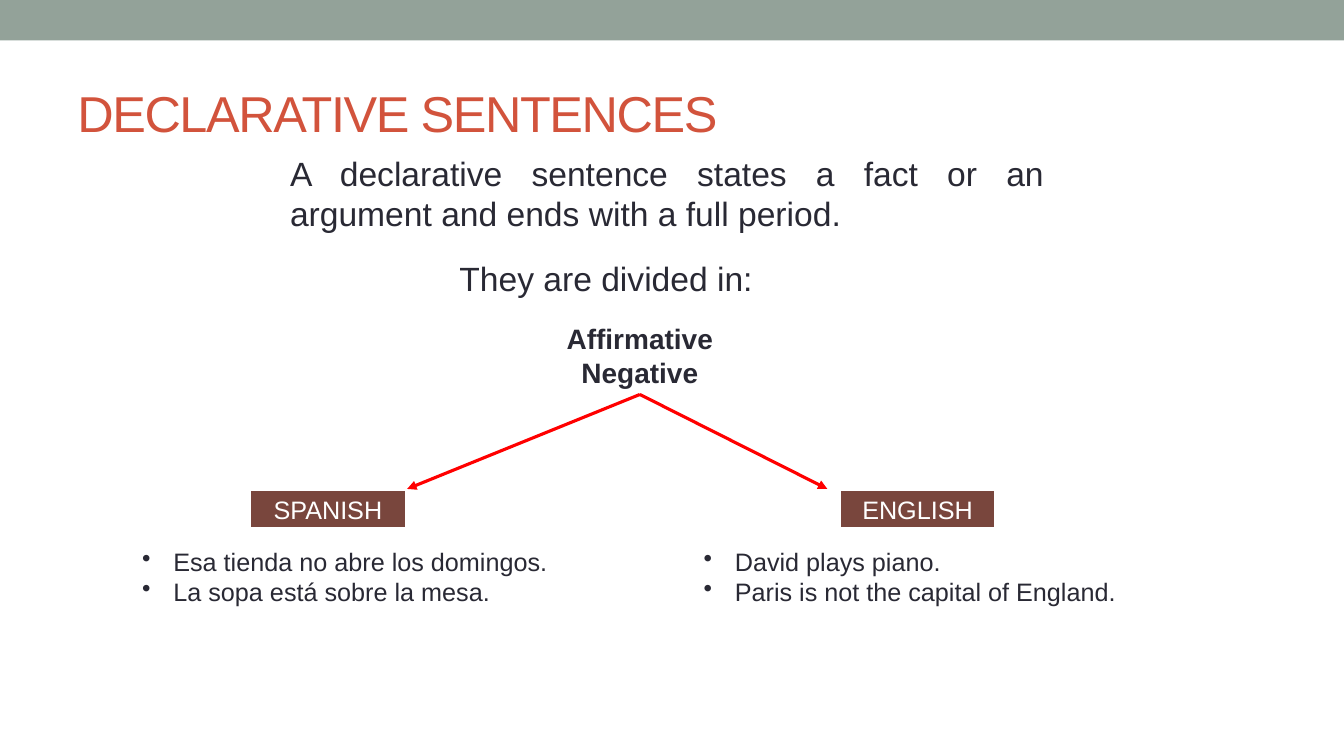
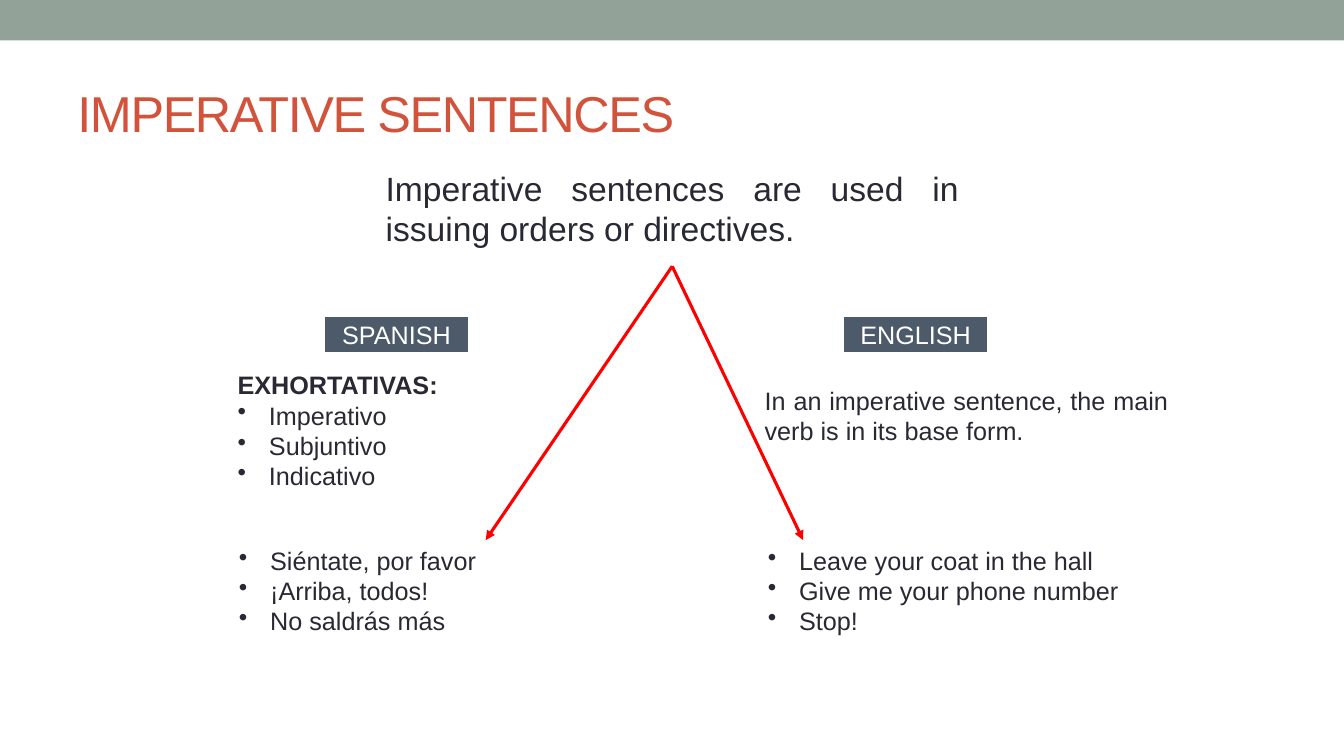
from lxml import etree
from pptx import Presentation
from pptx.dml.color import RGBColor
from pptx.enum.shapes import MSO_CONNECTOR, MSO_SHAPE
from pptx.enum.text import MSO_ANCHOR, MSO_AUTO_SIZE, PP_ALIGN
from pptx.oxml.ns import qn
from pptx.util import Cm, Pt

STRAIGHT = MSO_CONNECTOR.STRAIGHT
RECTANGLE = MSO_SHAPE.RECTANGLE
TOP, MIDDLE = MSO_ANCHOR.TOP, MSO_ANCHOR.MIDDLE
GROW = MSO_AUTO_SIZE.SHAPE_TO_FIT_TEXT
LEFT, CENTER, JUSTIFY = PP_ALIGN.LEFT, PP_ALIGN.CENTER, PP_ALIGN.JUSTIFY

SAGE = RGBColor(0x93, 0xA2, 0x99)
RUST = RGBColor(0xD2, 0x53, 0x3C)
INK = RGBColor(0x29, 0x29, 0x34)
BROWN = RGBColor(0x79, 0x46, 0x3D)
SLATE = RGBColor(0x4C, 0x5A, 0x6A)
RED = RGBColor(0xFF, 0x00, 0x00)
WHITE = RGBColor(0xFF, 0xFF, 0xFF)

FONT = "Arial"
WIDTH, HEIGHT = 33.87, 19.05
TAG_HEIGHT = 1.02
BOTTOM_SIDE = 2


class SentenceDeck:
    def __init__(self):
        self.deck = Presentation()
        self.deck.slide_width, self.deck.slide_height = Cm(WIDTH), Cm(HEIGHT)
        self.page = None

    def start_page(self, title):
        self.page = self.deck.slides.add_slide(self.deck.slide_layouts[6])
        self.rectangle(0, 0, WIDTH, 1.02, SAGE)
        box = self.text(1.7, 1.47, 30.48, 2.74, [title], 36, color=RUST)
        box.text_frame.vertical_anchor = MIDDLE
        for span in box.text_frame.paragraphs[0].runs:
            span.font._element.set("spc", "-100")

    def rectangle(self, left, top, width, height, color):
        box = self.page.shapes.add_shape(RECTANGLE, Cm(left), Cm(top), Cm(width), Cm(height))
        box.shadow.inherit = False
        box.fill.solid()
        box.fill.fore_color.rgb = color
        box.line.fill.background()
        return box

    def set_lines(self, box, lines, size, color=INK, align=LEFT, bold=False):
        frame = box.text_frame
        frame.word_wrap = True
        for index, line in enumerate(lines):
            para = frame.paragraphs[0] if index == 0 else frame.add_paragraph()
            para.text = line
            para.alignment = align
            para.font.name, para.font.size = FONT, Pt(size)
            para.font.bold = bold
            para.font.color.rgb = color

    def text(self, left, top, width, height, lines, size=18, **style):
        box = self.page.shapes.add_textbox(Cm(left), Cm(top), Cm(width), Cm(height))
        self.set_lines(box, lines, size, **style)
        return box

    def bullets(self, left, top, width, height, items, heading=None):
        lines = [heading, *items] if heading else items
        box = self.text(left, top, width, height, lines)
        paras = list(box.text_frame.paragraphs)
        if heading:
            paras.pop(0).font.bold = True
        for para in paras:
            properties = para._p.get_or_add_pPr()
            properties.set("marL", str(Cm(0.79)))
            properties.set("indent", str(-Cm(0.79)))
            bullet = etree.Element(qn("a:buChar"), char="•")
            properties.insert_element_before(bullet, "a:tabLst", "a:defRPr", "a:extLst")

    def tag(self, left, top, width, label, color):
        box = self.rectangle(left, top, width, TAG_HEIGHT, color)
        box.line.color.rgb = WHITE
        box.line.width = Pt(3.5)
        self.set_lines(box, [label], 18, color=WHITE, align=CENTER)
        box.text_frame.vertical_anchor = TOP
        box.text_frame.auto_size = GROW

    def language_tags(self, lefts, top, width, color):
        for left, label in zip(lefts, ("SPANISH", "ENGLISH")):
            self.tag(left, top, width, label, color)

    def arrows(self, source, ends, top):
        for end in ends:
            arrow = self.page.shapes.add_connector(STRAIGHT, 0, 0, Cm(end), Cm(top))
            arrow.begin_connect(source, BOTTOM_SIDE)
            arrow.line.color.rgb = RED
            arrow.line.width = Pt(2.25)
            etree.SubElement(arrow.line._get_or_add_ln(), qn("a:tailEnd"), type="triangle")
            etree.SubElement(arrow._element.spPr, qn("a:effectLst"))


def declarative_page(show):
    show.start_page("DECLARATIVE SENTENCES")
    show.text(7.06, 3.73, 19.5, 2.69,
              ["A declarative sentence states a fact or an argument and ends with a full period."],
              24, align=JUSTIFY)
    show.text(11.33, 6.38, 9.75, 1.35, ["They are divided in:"], 24, align=JUSTIFY)
    kinds = show.text(13.46, 7.98, 5.33, 1.96, ["Affirmative", "Negative"], 20,
                      align=CENTER, bold=True)
    examples = (
        (3.33, ["Esa tienda no abre los domingos.", "La sopa está sobre la mesa."]),
        (17.48, ["David plays piano.", "Paris is not the capital of England."]),
    )
    for left, items in examples:
        show.bullets(left, 13.64, 10.9, 1.8, items)
    show.language_tags((6.27, 21.13), 12.32, 3.99, BROWN)
    show.arrows(kinds, (10.26, 20.85), 12.32)


def imperative_page(show):
    show.start_page("IMPERATIVE SENTENCES")
    definition = show.text(9.47, 4.11, 14.94, 2.6,
                           ["Imperative sentences are used in issuing orders or directives."],
                           24, align=JUSTIFY)
    show.text(19.02, 9.58, 10.67, 1.8,
              ["In an imperative sentence, the main verb is in its base form."], align=JUSTIFY)
    show.bullets(5.74, 9.19, 8.26, 3.33, ["Imperativo", "Subjuntivo", "Indicativo"],
                 heading="EXHORTATIVAS:")
    examples = (
        (5.77, 8.26, ["Siéntate, por favor", "¡Arriba, todos!", "No saldrás más"]),
        (19.1, 12.22, ["Leave your coat in the hall", "Give me your phone number", "Stop!"]),
    )
    for left, width, items in examples:
        show.bullets(left, 13.61, width, 2.57, items)
    show.language_tags((8.13, 21.21), 7.92, 3.73, SLATE)
    show.arrows(definition, (12.24, 20.24), 13.61)


def main():
    show = SentenceDeck()
    declarative_page(show)
    imperative_page(show)
    show.deck.save("out.pptx")


if __name__ == "__main__":
    main()
